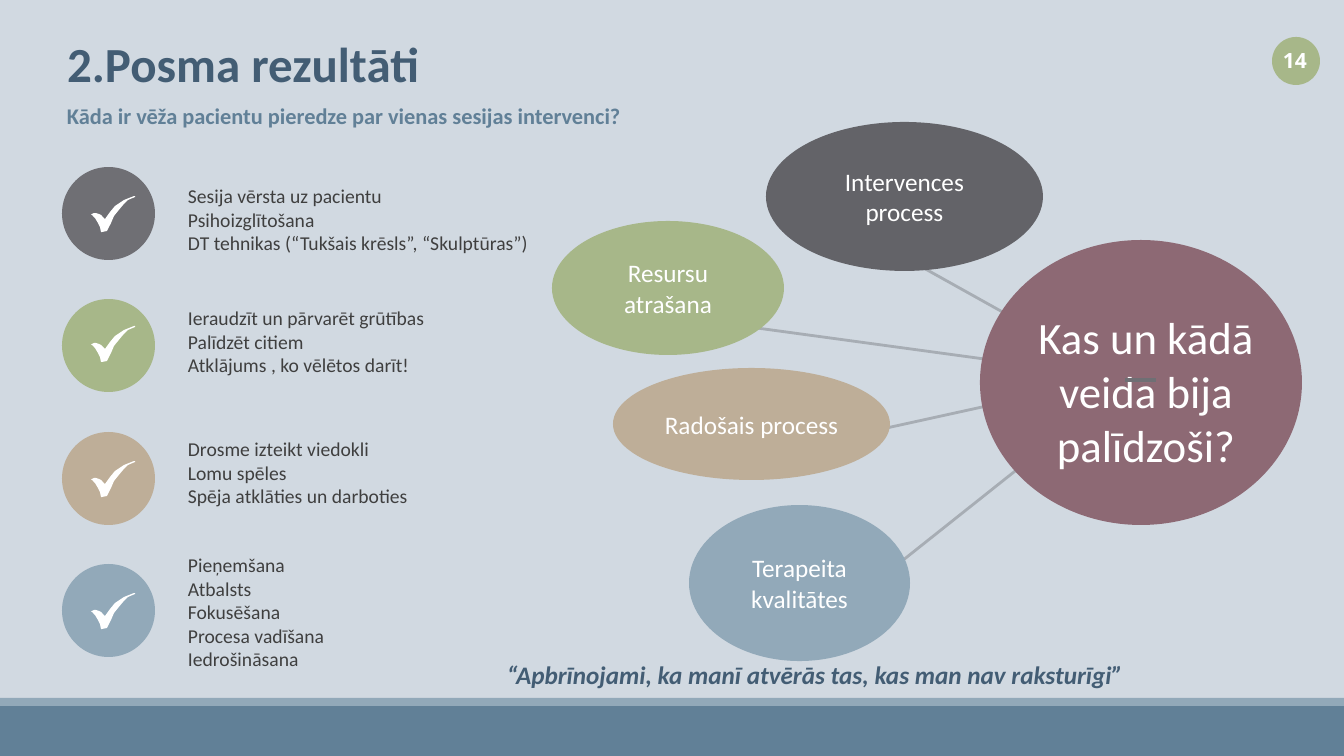
from dataclasses import dataclass

from lxml.etree import SubElement
from pptx import Presentation
from pptx.dml.color import RGBColor
from pptx.enum.shapes import MSO_CONNECTOR as Connector, MSO_SHAPE as Shape
from pptx.enum.text import MSO_ANCHOR as Anchor, MSO_AUTO_SIZE as AutoSize, PP_ALIGN as Align
from pptx.oxml.ns import qn
from pptx.util import Pt

PX = 9071  # EMU per px; the slide is 1344 px wide


@dataclass(frozen=True)
class Theme:
    background: str = "D1D9E1"
    navy: str = "435D74"
    steel: str = "618097"
    blue: str = "92A9B9"
    green: str = "A7B789"
    sand: str = "BEAE98"
    plum: str = "8D6974"
    charcoal: str = "636368"
    grey: str = "6F6F74"
    ink: str = "3F3F3F"
    white: str = "FFFFFF"
    black: str = "000000"
    font: str = "Calibri"
    number_font: str = "Open Sans"
    title_size: int = 35
    question_size: int = 32
    label_size: int = 18
    subtitle_size: int = 16
    number_size: int = 15
    list_size: int = 14


theme = Theme()


def add_filled(shapes, preset, box, colour):
    shape = shapes.add_shape(preset, *[v * PX for v in box])
    shape.shadow.inherit = False
    shape.fill.solid()
    shape.fill.fore_color.rgb = RGBColor.from_string(colour)
    shape.line.fill.background()
    return shape


def write(frame, lines, size, colour, font=theme.font, align=Align.LEFT,
          anchor=Anchor.TOP, bold=False, italic=False):
    """Fill a text frame with one paragraph per line."""
    frame.word_wrap = True
    frame.vertical_anchor = anchor
    for index, line in enumerate(lines):
        paragraph = frame.add_paragraph() if index else frame.paragraphs[0]
        paragraph.alignment = align
        run = paragraph.add_run()
        run.text = line
        run.font.name = font
        run.font.size = Pt(size)
        run.font.bold = bold
        run.font.italic = italic
        run.font.color.rgb = RGBColor.from_string(colour)


prs = Presentation()
prs.slide_width, prs.slide_height = 1344 * PX, 756 * PX
slide = prs.slides.add_slide(prs.slide_layouts[5])
shapes = slide.shapes
slide.background.fill.solid()
slide.background.fill.fore_color.rgb = RGBColor.from_string(theme.background)

# Footer bands and number badge
add_filled(shapes, Shape.RECTANGLE, (0, 706, 1344, 50), theme.steel)
add_filled(shapes, Shape.RECTANGLE, (0, 698, 1344, 8), theme.blue)
add_filled(shapes, Shape.OVAL, (1272, 37, 48, 48), theme.green)

# Title
title = shapes.title
title.left, title.top, title.width, title.height = [v * PX for v in (57, 31, 1159, 67)]
title.text_frame.auto_size = AutoSize.NONE
write(title.text_frame, ["2.Posma rezultāti"], theme.title_size, theme.navy,
      anchor=Anchor.BOTTOM, bold=True)
title.text_frame.paragraphs[0].line_spacing = 0.85

# Links: each bent line ties two topics to the question
for start, *bends in [
    [(886, 247), (1119, 377), (873, 431)],
    [(735, 325), (1131, 379), (868, 588)],
]:
    builder = shapes.build_freeform(*start, scale=PX)
    builder.add_line_segments(bends, close=False)
    link = builder.convert_to_shape()
    link.shadow.inherit = False
    link.fill.background()
    link.line.width = Pt(2)
    link.line.color.rgb = RGBColor.from_string(theme.black)
    line_colour = link.line._get_or_add_ln().find(".//" + qn("a:srgbClr"))
    SubElement(line_colour, qn("a:alpha"), val="20000")

# Question and its topics
add_filled(shapes, Shape.OVAL, (980, 240, 322, 285), theme.plum)
topics = [
    ("Intervences process", (766, 122, 277, 149), theme.charcoal),
    ("Resursu atrašana", (552, 221, 232, 134), theme.green),
    ("Radošais process", (613, 368, 277, 112), theme.sand),
    ("Terapeita kvalitātes", (689, 505, 221, 156), theme.blue),
]
for topic, box, colour in topics:
    bubble = add_filled(shapes, Shape.OVAL, box, colour)
    write(bubble.text_frame, [topic], theme.label_size, theme.white,
          align=Align.CENTER, anchor=Anchor.MIDDLE)

# Result lists, each with a ticked circle
TICK = [(8, 18), (5, 17), (3, 17), (1, 18), (0, 19), (1, 19), (4, 22), (7, 27),
        (9, 31), (10, 36), (11, 36), (16, 35), (17, 33), (20, 27), (23, 20),
        (27, 15), (32, 9), (37, 4), (44, 1), (44, 0), (43, 0), (33, 4), (24, 10),
        (19, 16), (14, 23), (12, 21), (10, 19)]
results = [
    (theme.grey, 196, (178, 179, 470, 112),
     ["Sesija vērsta uz pacientu", "Psihoizglītošana",
      "DT tehnikas (“Tukšais krēsls”, “Skulptūras”)"]),
    (theme.green, 326, (178, 301, 382, 112),
     ["Ieraudzīt un pārvarēt grūtības", "Palīdzēt citiem",
      "Atklājums , ko vēlētos darīt!"]),
    (theme.sand, 461, (178, 432, 382, 139),
     ["Drosme izteikt viedokli", "Lomu spēles", "Spēja atklāties un darboties"]),
    (theme.blue, 593, (178, 548, 378, 92),
     ["Pieņemšana", "Atbalsts", "Fokusēšana", "Procesa vadīšana", "Iedrošināsana"]),
]
for row, (colour, tick_top, box, lines) in enumerate(results):
    marker = shapes.add_group_shape().shapes
    add_filled(marker, Shape.OVAL, (62, 167 + row * 265 // 2, 93, 93), colour)
    start, *outline = [(91 + x, tick_top + y) for x, y in TICK]
    builder = marker.build_freeform(*start, scale=PX)
    builder.add_line_segments(outline)
    tick = builder.convert_to_shape()
    tick.shadow.inherit = False
    tick.fill.solid()
    tick.fill.fore_color.rgb = RGBColor.from_string(theme.white)
    tick.line.fill.background()
    result = shapes.add_textbox(*[v * PX for v in box]).text_frame
    write(result, lines, theme.list_size, theme.ink)
    result.auto_size = AutoSize.SHAPE_TO_FIT_TEXT

# Single texts
captions = [
    ("Kas un kādā veidā bija palīdzoši?", (991, 305, 310, 173),
     theme.question_size, theme.white, dict(align=Align.CENTER)),
    ("Kāda ir vēža pacientu pieredze par vienas sesijas intervenci?",
     (57, 97, 1169, 65), theme.subtitle_size, theme.steel, dict(bold=True)),
    ("“Apbrīnojami, ka manī atvērās tas, kas man nav raksturīgi”",
     (497, 654, 735, 40), theme.label_size, theme.navy, dict(bold=True, italic=True)),
    ("14", (1259, 45, 72, 30), theme.number_size, theme.white,
     dict(font=theme.number_font, align=Align.CENTER, anchor=Anchor.MIDDLE, bold=True)),
]
for caption, box, size, colour, style in captions:
    write(shapes.add_textbox(*[v * PX for v in box]).text_frame,
          [caption], size, colour, **style)

# Short dash over the question
dash = shapes.add_connector(Connector.STRAIGHT, *[v * PX for v in (1125, 380, 1156, 380)])
dash.line.width = Pt(3)
dash.line.color.rgb = RGBColor.from_string(theme.grey)
SubElement(dash._element.spPr, qn("a:effectLst"))

prs.save("out.pptx")
